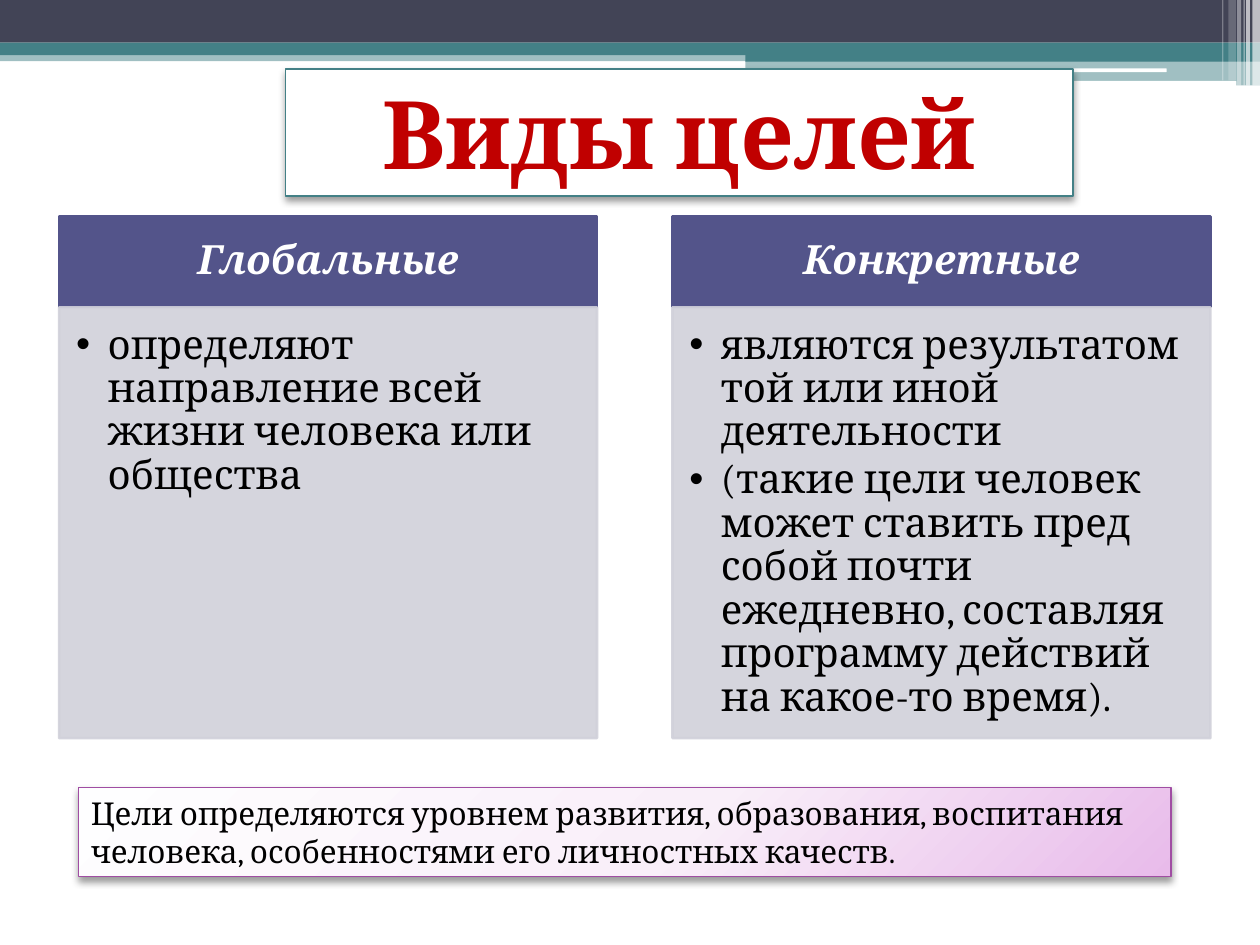
from lxml import etree
from pptx import Presentation
from pptx.dml.color import RGBColor
from pptx.enum import shapes, text
from pptx.oxml import parse_xml
from pptx.oxml.ns import nsdecls, qn
from pptx.util import Pt

SLATE = RGBColor(0x42, 0x44, 0x56)
TEAL = RGBColor(0x43, 0x80, 0x86)
WHITE = RGBColor(0xFF, 0xFF, 0xFF)
BLACK = RGBColor(0, 0, 0)
RED = RGBColor(0xC0, 0, 0)
INDIGO = RGBColor(0x53, 0x54, 0x8A)
GREY = RGBColor(0xD1, 0xD1, 0xDA)
PURPLE = RGBColor(0xA0, 0x4D, 0xA3)
OUTLINE = RGBColor(0x4C, 0x4D, 0x85)
NOTE_STOPS = ((0, "FEFEFF"), (55, "F9EFF9"), (100, "E8BBEA"))
FONT = "Cambria"

RECT = shapes.MSO_SHAPE.RECTANGLE
ROUND = shapes.MSO_SHAPE.ROUNDED_RECTANGLE

# left, top, width, height, colour, opacity in percent
BANDS = (
    (0, 28.8, 720, 6.2, TEAL, 50),
    (0, 0, 720, 24.4, SLATE, 100),
    (0, 24.4, 720, 7.2, TEAL, 100),
    (426, 28.1, 294, 7.2, TEAL, 100),
    (426, 34.6, 294, 14.2, TEAL, 50),
)
WHITE_DASHES = ((425.5, 39.1, 241.2, 2.2), (580.5, 46.3, 126, 2.9))
# left, width, height, opacity in percent
STRIPES = (
    (715.7, 4.3, 49, 65), (712.1, 2.2, 49, 65), (710.6, 0.7, 49, 60),
    (707, 2.2, 49, 40), (702, 4.3, 46, 20), (698.4, 0.7, 46, 30),
)
COLUMNS = (
    ("Глобальные", ["определяют направление всей жизни человека или общества"]),
    ("Конкретные", [
        "являются результатом той или иной деятельности",
        "(такие цели человек может ставить пред собой почти ежедневно, "
        "составляя программу действий на какое-то время)."]),
)
NOTE = ("Цели определяются уровнем развития, образования, воспитания "
        "человека, особенностями его личностных качеств.")


def set_opacity(fill_parent, percent):
    for clr in fill_parent.iter(qn("a:srgbClr")):
        etree.SubElement(clr, qn("a:alpha")).set("val", str(percent * 1000))


def add_box(s, left, top, width, height, color, opacity=100, kind=RECT,
            line=None, line_width=1.5):
    sp = s.shapes.add_shape(kind, Pt(left), Pt(top), Pt(width), Pt(height))
    sp.shadow.inherit = False
    sp.fill.solid()
    sp.fill.fore_color.rgb = color
    if line is None:
        sp.line.fill.background()
    else:
        sp.line.color.rgb = line
        sp.line.width = Pt(line_width)
    if opacity < 100:
        set_opacity(sp.element.spPr, opacity)
    return sp


def add_shadow(sp):
    spPr = sp.element.spPr
    for old in spPr.findall(qn("a:effectLst")):
        spPr.remove(old)
    spPr.append(parse_xml(
        f'<a:effectLst {nsdecls("a")}><a:outerShdw blurRad="{Pt(4.1)}" '
        f'dist="{Pt(2)}" dir="5400000" rotWithShape="0"><a:srgbClr val="000000">'
        '<a:alpha val="40000"/></a:srgbClr></a:outerShdw></a:effectLst>'))


def set_radial_fill(sp, stops):
    """Replace the solid fill with a circular gradient wider than the shape."""
    gs = "".join(f'<a:gs pos="{pos * 1000}"><a:srgbClr val="{clr}"/></a:gs>'
                 for pos, clr in stops)
    spPr = sp.element.spPr
    spPr.replace(spPr.find(qn("a:solidFill")), parse_xml(
        f'<a:gradFill {nsdecls("a")} rotWithShape="1"><a:gsLst>{gs}</a:gsLst>'
        '<a:path path="circle"><a:fillToRect l="-40000" t="-90000" '
        'r="140000" b="190000"/></a:path></a:gradFill>'))


def set_text(sp, lines, size, color, align=text.PP_ALIGN.LEFT,
             anchor=text.MSO_ANCHOR.TOP, insets=(7.2, 3.6, 7.2, 3.6),
             bold=False, italic=False, spacing=1.0):
    tf = sp.text_frame
    tf.word_wrap = True
    tf.auto_size = text.MSO_AUTO_SIZE.NONE
    tf.vertical_anchor = anchor
    tf.margin_left, tf.margin_top, tf.margin_right, tf.margin_bottom = map(Pt, insets)
    tf.text = "\n".join(lines)
    for p in tf.paragraphs:
        p.alignment = align
        p.line_spacing = spacing
        for r in p.runs:
            r.font.name = FONT
            r.font.size = Pt(size)
            r.font.bold = bold
            r.font.italic = italic
            r.font.color.rgb = color


def add_bullets(sp):
    for p in sp.text_frame.paragraphs:
        p.space_after = Pt(2.6)
        pPr = p._p.get_or_add_pPr()
        pPr.set("marL", str(Pt(18)))
        pPr.set("indent", str(-Pt(18)))
        etree.SubElement(pPr, qn("a:buFont")).set("typeface", "Arial")
        etree.SubElement(pPr, qn("a:buChar")).set("char", "•")


def add_banner(s):
    for band in BANDS:
        add_box(s, *band)
    for dash in WHITE_DASHES:
        add_box(s, *dash, WHITE, kind=ROUND)
    for left, width, height, opacity in STRIPES:
        add_box(s, left, 0, width, height, WHITE, opacity)


def add_title(s, words):
    sp = s.shapes.title
    sp.element.getparent().append(sp.element)  # in front of the banner
    sp.left, sp.top, sp.width, sp.height = map(Pt, (163.2, 39.4, 450, 72.7))
    sp.fill.solid()
    sp.fill.fore_color.rgb = WHITE
    sp.line.color.rgb = TEAL
    sp.line.width = Pt(0.75)
    add_shadow(sp)
    set_text(sp, [words], 54, RED, text.PP_ALIGN.CENTER, bold=True)
    rPr = sp.text_frame.paragraphs[0].runs[0].font._element
    rPr.insert(0, parse_xml(
        f'<a:ln {nsdecls("a")} w="{Pt(0.83)}"><a:solidFill>'
        f'<a:srgbClr val="{OUTLINE}"/></a:solidFill></a:ln>'))


def add_column(s, left, heading, items):
    width, top, head_h, body_h = 307.4, 123.6, 52, 246.2
    head = add_box(s, left, top, width, head_h, INDIGO, line=INDIGO)
    set_text(head, [heading], 23, WHITE, text.PP_ALIGN.CENTER,
             text.MSO_ANCHOR.MIDDLE, (13, 7.2, 13, 7.2), True, True, 0.9)
    body = add_box(s, left, top + head_h, width, body_h, GREY, 90, line=GREY)
    set_text(body, items, 23, BLACK, insets=(9.7, 9.7, 13, 14.5), spacing=0.9)
    add_bullets(body)


def add_note(s, words):
    sp = add_box(s, 44.8, 450, 624.4, 51, WHITE, line=PURPLE, line_width=0.75)
    set_radial_fill(sp, NOTE_STOPS)
    add_shadow(sp)
    set_text(sp, [words], 18, BLACK)


def main():
    prs = Presentation()
    prs.slide_width, prs.slide_height = Pt(720), Pt(540)
    s = prs.slides.add_slide(prs.slide_layouts[5])
    add_banner(s)
    add_title(s, "Виды целей")
    for i, (heading, items) in enumerate(COLUMNS):
        add_column(s, 33.8 + 350.5 * i, heading, items)
    add_note(s, NOTE)
    prs.save("out.pptx")


if __name__ == "__main__":
    main()
